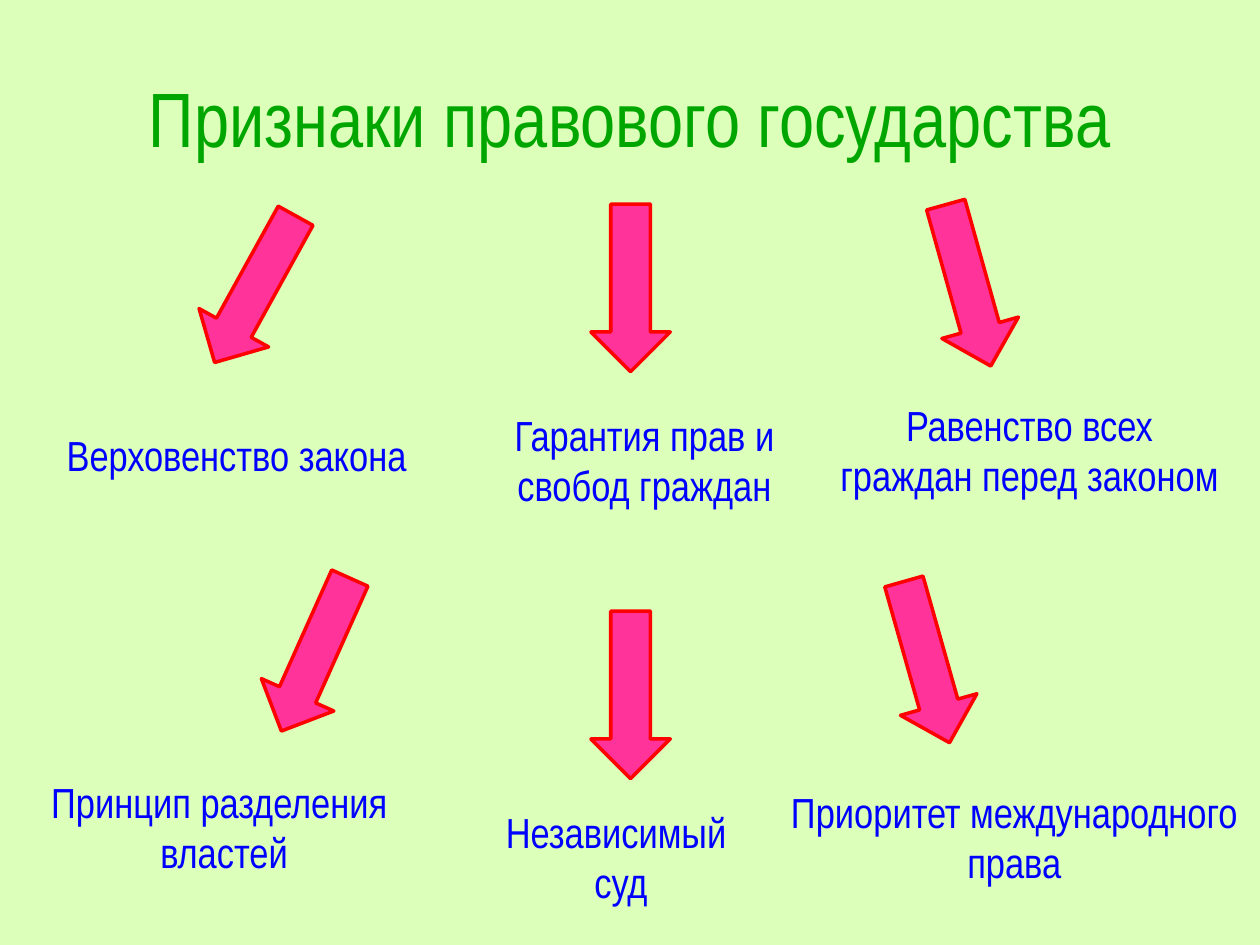
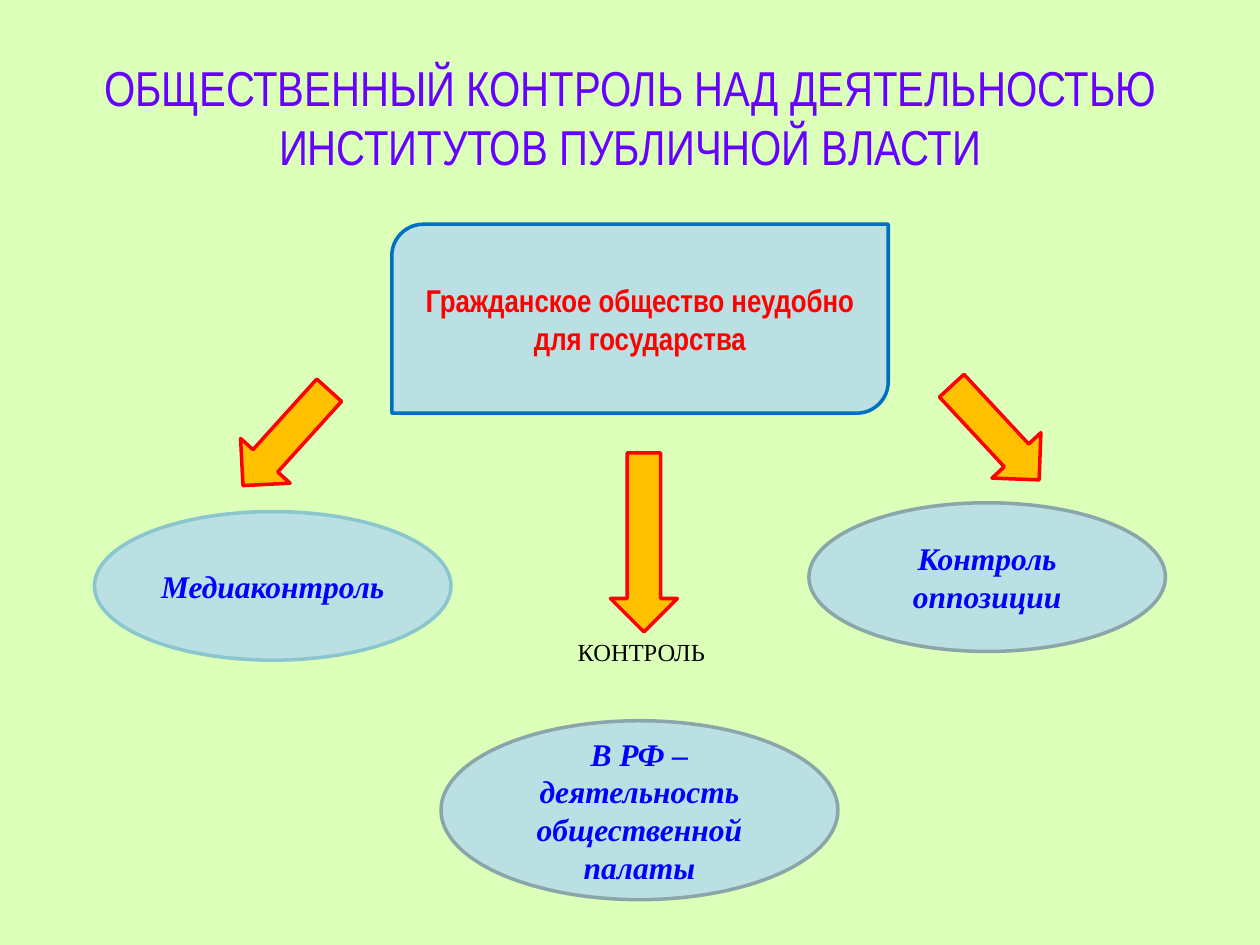
from dataclasses import dataclass

from pptx import Presentation
from pptx.dml.color import RGBColor
from pptx.enum.shapes import MSO_SHAPE
from pptx.enum.text import MSO_ANCHOR, PP_ALIGN
from pptx.util import Inches, Pt

BACKGROUND = "DCFFB9"
RED = "FF0000"
BLUE = "0000FF"
PALE_BLUE = "BBE0E3"
GREY = "8AA6A8"
NARROW = "Arial Narrow"
SERIF = "Times New Roman"
TITLE_ONLY = 5


@dataclass
class Box:
    left: float
    top: float
    width: float
    height: float

    def inner(self, left, top, width, height):
        return Box(self.left + left, self.top + top, width, height)

    def lengths(self):
        return [Inches(value) for value in (self.left, self.top, self.width, self.height)]


@dataclass
class TextStyle:
    font: str
    size: float
    color: str
    bold: bool = False
    italic: bool = False


LABEL = TextStyle(NARROW, 24, BLUE)
HEADING = TextStyle(NARROW, 18, RED, bold=True)
CONTROL_FORM = TextStyle(SERIF, 18, BLUE, bold=True, italic=True)
CAPTION = TextStyle(SERIF, 14, "000000")


def rgb(color):
    return RGBColor.from_string(color)


def write(text_frame, lines, style, alignment=PP_ALIGN.CENTER):
    for index, line in enumerate(lines):
        paragraph = text_frame.add_paragraph() if index else text_frame.paragraphs[0]
        paragraph.alignment = alignment
        run = paragraph.add_run()
        run.text = line
        font = run.font
        font.name, font.size = style.font, Pt(style.size)
        font.bold, font.italic = style.bold, style.italic
        font.color.rgb = rgb(style.color)


def add_titled_slide(presentation, title, size, color):
    slide = presentation.slides.add_slide(presentation.slide_layouts[TITLE_ONLY])
    shape = slide.shapes.title
    shape.left, shape.top, shape.width, shape.height = Box(0.5, 0.3, 9, 1.25).lengths()
    shape.text_frame.vertical_anchor = MSO_ANCHOR.MIDDLE
    write(shape.text_frame, [title], TextStyle(NARROW, size, color))
    return slide


def add_outlined(slide, kind, box, fill, line, rotation=0):
    shape = slide.shapes.add_shape(kind, *box.lengths())
    shape.shadow.inherit = False
    shape.fill.solid()
    shape.fill.fore_color.rgb = rgb(fill)
    shape.line.color.rgb = rgb(line)
    shape.line.width = Pt(2)
    shape.rotation = rotation
    return shape


def add_panel(slide, kind, box, line, text, style):
    shape = add_outlined(slide, kind, box, PALE_BLUE, line)
    shape.text_frame.word_wrap = True
    shape.text_frame.vertical_anchor = MSO_ANCHOR.MIDDLE
    write(shape.text_frame, [text], style)


def add_label(slide, box, lines, style, wrap=True, alignment=PP_ALIGN.CENTER):
    text_frame = slide.shapes.add_textbox(*box.lengths()).text_frame
    text_frame.word_wrap = wrap
    write(text_frame, lines, style, alignment)


def add_feature_row(slide, box, arrows, labels):
    for left, top, rotation in arrows:
        add_outlined(slide, MSO_SHAPE.DOWN_ARROW, box.inner(left, top, 0.63, 1.33),
                     "FF3399", RED, rotation)
    for place, lines, wrap, alignment in labels:
        add_label(slide, box.inner(*place), lines, LABEL, wrap, alignment)


def build_features(presentation):
    slide = add_titled_slide(presentation, "Признаки правового государства", 44, "00A600")
    center = PP_ALIGN.CENTER
    add_feature_row(
        slide, Box(0, 1.6, 10, 2.9),
        [(1.71, 0.03, 28.9), (4.69, 0.02, 0), (7.37, 0, 344.4)],
        [((0.43, 1.76, 2.95, 0.5), ["Верховенство закона"], False, PP_ALIGN.LEFT),
         ((3.98, 1.6, 2.27, 1.31), ["Гарантия прав и свобод граждан"], True, center),
         ((6.57, 1.52, 3.2, 1.31), ["Равенство всех граждан перед законом"], True, center)])
    add_feature_row(
        slide, Box(0, 4.5, 10, 3),
        [(2.19, 0.03, 24.1), (4.69, 0.35, 0), (7.04, 0.09, 344.2)],
        [((0.28, 1.61, 2.92, 0.91), ["Принцип разделения", " властей"], False, center),
         ((3.9, 1.85, 1.98, 0.91), ["Независимый", " суд"], False, center),
         ((6.1, 1.69, 3.9, 0.91), ["Приоритет международного", "права"], False, center)])


def add_control_scheme(slide, box):
    add_panel(slide, MSO_SHAPE.ROUND_2_DIAG_RECTANGLE, box.inner(2.36, 0, 3.94, 1.5),
              "0070C0", "Гражданское общество неудобно для государства", HEADING)
    for left, top, length, rotation in [
            (1.01, 1.43, 1.02, 132.1), (3.65, 2.26, 1.42, 90), (6.64, 1.39, 1.02, 47.1)]:
        add_outlined(slide, MSO_SHAPE.RIGHT_ARROW, box.inner(left, top, length, 0.53),
                     "FFC000", RED, rotation)
    add_label(slide, box.inner(3.38, 3.23, 1.92, 0.34), ["КОНТРОЛЬ"], CAPTION)
    for place, line, text in [
            ((0, 2.28, 2.83, 1.18), "8AC6CD", "Медиаконтроль"),
            ((5.67, 2.21, 2.83, 1.18), GREY, "Контроль оппозиции"),
            ((2.75, 3.94, 3.15, 1.42), GREY, "В РФ – деятельность общественной палаты")]:
        add_panel(slide, MSO_SHAPE.OVAL, box.inner(*place), line, text, CONTROL_FORM)


def build_control(presentation):
    slide = add_titled_slide(
        presentation,
        "ОБЩЕСТВЕННЫЙ КОНТРОЛЬ НАД ДЕЯТЕЛЬНОСТЬЮ ИНСТИТУТОВ ПУБЛИЧНОЙ ВЛАСТИ",
        28, "6600FF")
    add_control_scheme(slide, Box(0.75, 1.78, 8.5, 5.36))


def main():
    presentation = Presentation()
    presentation.slide_width, presentation.slide_height = Inches(10), Inches(7.5)
    background = presentation.slide_master.background.fill
    background.solid()
    background.fore_color.rgb = rgb(BACKGROUND)
    build_features(presentation)
    build_control(presentation)
    presentation.save("out.pptx")


if __name__ == "__main__":
    main()
